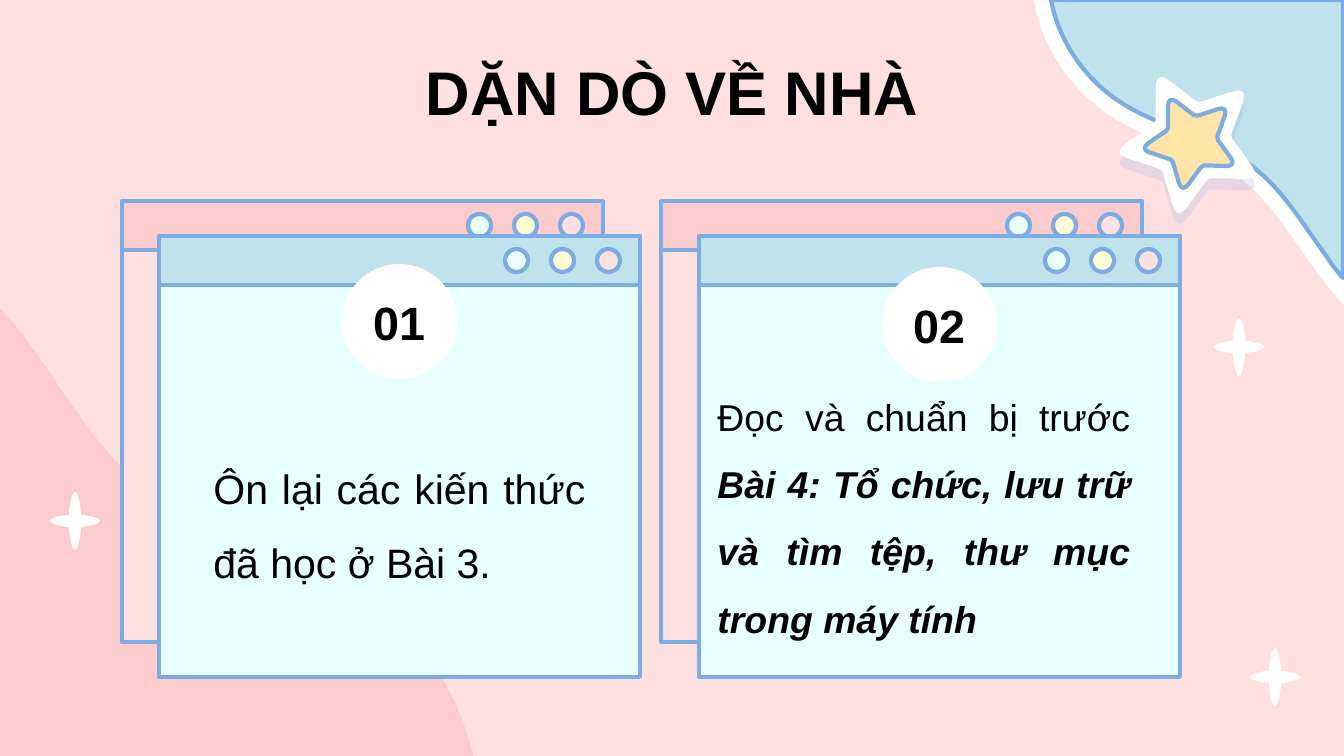
from math import cos, radians, sin

from lxml import etree
from pptx import Presentation
from pptx.dml.color import RGBColor
from pptx.enum.shapes import MSO_SHAPE
from pptx.enum.text import MSO_ANCHOR, MSO_AUTO_SIZE, PP_ALIGN
from pptx.oxml import parse_xml
from pptx.oxml.ns import nsdecls, qn
from pptx.util import Pt

RECT, OVAL = MSO_SHAPE.RECTANGLE, MSO_SHAPE.OVAL
TOP, MIDDLE = MSO_ANCHOR.TOP, MSO_ANCHOR.MIDDLE
CENTER, JUSTIFY = PP_ALIGN.CENTER, PP_ALIGN.JUSTIFY
NO_FIT = MSO_AUTO_SIZE.NONE
PX = 9144000 / 1344
CURVE_TAGS = {2: "a:quadBezTo", 3: "a:cubicBezTo"}
C = {
    "bg": "FFE0E1", "pink": "FCCBCD", "ice": "E7FFFF", "blue": "BFE2EC",
    "line": "7CACE1", "cream": "FFFDD1", "gold": "FEE4A7",
    "white": "FFFFFF", "black": "000000",
}

prs = Presentation()
prs.slide_width, prs.slide_height = round(1344 * PX), round(756 * PX)
s = prs.slides.add_slide(prs.slide_layouts[3])
s.background.fill.solid()
s.background.fill.fore_color.rgb = RGBColor.from_string(C["bg"])


def paint(sp, fill, line=None, weight=2.25):
    sp.shadow.inherit = False
    sp.fill.solid()
    sp.fill.fore_color.rgb = RGBColor.from_string(C[fill])
    if line:
        sp.line.color.rgb = RGBColor.from_string(C[line])
        sp.line.width = Pt(weight)
    else:
        sp.line.fill.background()
    return sp


def draw_curves(start, pieces, fill, line=None, weight=2.25, origin=(0, 0), scale=1):
    start, *pieces = [
        [(round((origin[0] + x * scale) * PX), round((origin[1] + y * scale) * PX))
         for x, y in piece]
        for piece in [[start], *pieces]
    ]
    builder = s.shapes.build_freeform(*start[0])
    builder.add_line_segments([piece[-1] for piece in pieces], close=True)
    sp = builder.convert_to_shape()
    segments = list(sp.element.iter(qn("a:lnTo")))
    for segment, piece in zip(segments, pieces):
        if len(piece) > 1:
            curve = etree.Element(qn(CURVE_TAGS[len(piece)]))
            for x, y in piece:
                etree.SubElement(curve, qn("a:pt"), x=str(x - sp.left), y=str(y - sp.top))
            segment.getparent().replace(segment, curve)
    return paint(sp, fill, line, weight)


hill = [
    [(458, 689), (417, 629), (360, 591)],
    [(293, 548), (208, 536), (145, 488)],
    [(95, 449), (65, 391), (27, 341)],
    [(19, 329), (9, 319), (0, 308)],
    [(0, 756)],
]
draw_curves((473, 756), hill, "pink")

corner = [
    [(1059, 42), (1085, 79), (1120, 102)],
    [(1161, 129), (1214, 136), (1253, 167)],
    [(1284, 191), (1304, 226), (1327, 257)],
    [(1332, 265), (1337, 271), (1343, 278)],
    [(1343, 0)],
]
border = draw_curves((1051, 0), corner, "ice", "white", 18)
etree.SubElement(border.element.spPr.find(qn("a:ln")), qn("a:miter"), lim="800000")
draw_curves((1051, 0), corner, "blue", "line")

sparkle = [
    [(-3, -29), (-6, -15), (-6, -6)], [(-12, -6), (-25, -3), (-25, 0)],
    [(-25, 3), (-12, 6), (-6, 6)], [(-6, 15), (-3, 29), (0, 29)],
    [(3, 29), (6, 15), (6, 6)], [(12, 6), (25, 3), (25, 0)],
    [(25, -3), (12, -6), (6, -6)], [(6, -15), (3, -29), (0, -29)],
]
for center in [(75, 521), (1275, 677), (1239, 347)]:
    draw_curves((0, -29), sparkle, "white", origin=center)

windows = [
    (661, 201, "bg", "pink"), (122, 201, "bg", "pink"),
    (699, 236, "ice", "blue"), (159, 236, "ice", "blue"),
]
for left, top, body_fill, bar_fill in windows:
    parts = [(RECT, 0, 49, 481, 392, body_fill), (RECT, 0, 0, 481, 49, bar_fill)]
    parts += [(OVAL, 346 + 46 * i, 13, 23, 23, fill)
              for i, fill in enumerate(["ice", "cream", "bg"])]
    for kind, x, y, w, h, fill in parts:
        box = [round(v * PX) for v in (left + x, top + y, w, h)]
        paint(s.shapes.add_shape(kind, *box), fill, "line")

corners = []
for i in range(10):
    radius, angle = (40 if i % 2 else 80), radians(-116 + 36 * i)
    corners.append((radius * cos(angle), radius * sin(angle)))
star = []
for i, (x, y) in enumerate(corners):
    cut = 0.06 if i % 2 else 0.34
    (px, py), (nx, ny) = corners[i - 1], corners[(i + 1) % 10]
    star.append([(x + (px - x) * cut, y + (py - y) * cut)])
    star.append([(x, y), (x + (nx - x) * cut, y + (ny - y) * cut)])
star_center = (1191, 142)
base = draw_curves(star[-1][-1], star, "white", origin=star_center)
effects = base.element.spPr.find(qn("a:effectLst"))
effects.append(parse_xml(
    f'<a:outerShdw {nsdecls("a")} blurRad="0" dist="76200" dir="5400000" algn="bl" rotWithShape="0">'
    f'<a:srgbClr val="{C["line"]}"><a:alpha val="18000"/></a:srgbClr></a:outerShdw>'))
draw_curves(star[-1][-1], star, "gold", "line", origin=star_center, scale=0.65)

title, left_body, right_body = s.placeholders
badges = [s.shapes.add_shape(OVAL, 0, 0, 0, 0) for _ in range(2)]
for badge in badges:
    paint(badge, "white")

texts = [
    (title, (0, 46, 1344, 89), 33, CENTER, MIDDLE, 1, [("DẶN DÒ VỀ NHÀ", True, False)]),
    (left_body, (200, 432, 399, 163), 22, JUSTIFY, TOP, 1.5,
     [("Ôn lại các kiến thức đã học ở Bài 3.", False, False)]),
    (right_body, (704, 365, 440, 285), 20, JUSTIFY, TOP, 1.5,
     [("Đọc và chuẩn bị trước ", False, False),
      ("Bài 4: Tổ chức, lưu trữ và tìm tệp, thư mục trong máy tính", True, True)]),
    (badges[0], (342, 264, 115, 115), 25, CENTER, MIDDLE, 1, [("01", True, False)]),
    (badges[1], (882, 267, 115, 115), 25, CENTER, MIDDLE, 1, [("02", True, False)]),
]
for sp, box, size, align, anchor, spacing, runs in texts:
    sp.left, sp.top, sp.width, sp.height = [round(v * PX) for v in box]
    s.shapes.element.append(sp.element)
    tf = sp.text_frame
    tf.word_wrap, tf.auto_size, tf.vertical_anchor = True, NO_FIT, anchor
    p = tf.paragraphs[0]
    if sp in (left_body, right_body):
        pPr = p._p.get_or_add_pPr()
        pPr.set("marL", "0")
        pPr.set("indent", "0")
        etree.SubElement(pPr, qn("a:buNone"))
    p.alignment, p.line_spacing, p.space_before = align, spacing, Pt(0)
    for text, bold, italic in runs:
        r = p.add_run()
        r.text = text
        r.font.name, r.font.size = "Arial", Pt(size)
        r.font.bold, r.font.italic = bold, italic
        r.font.color.rgb = RGBColor.from_string(C["black"])

prs.save("out.pptx")
